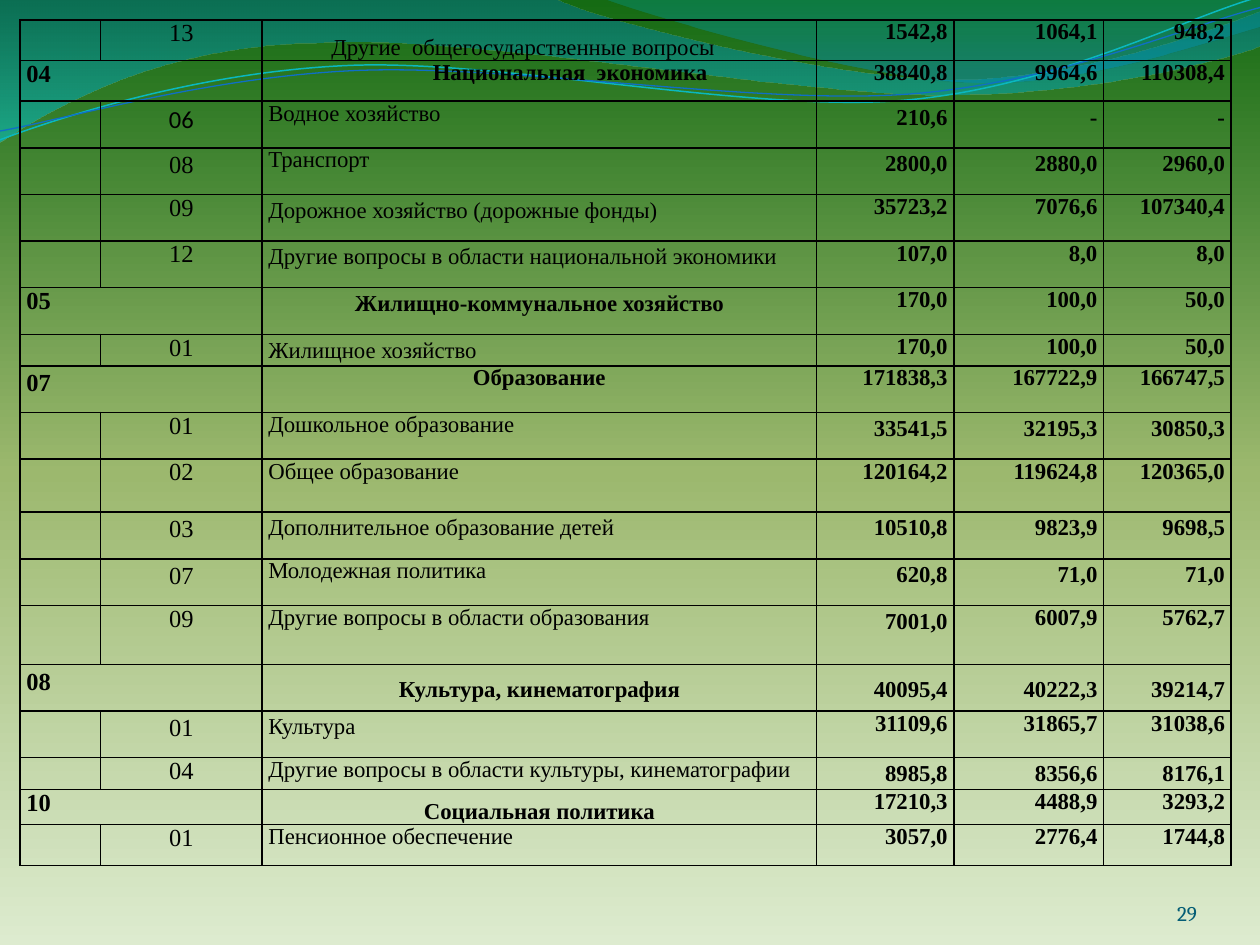
from lxml.etree import SubElement
from pptx import Presentation
from pptx.dml.color import RGBColor
from pptx.enum.text import MSO_ANCHOR, PP_ALIGN
from pptx.oxml.ns import qn
from pptx.util import Cm, Pt

INK = {"text": "000000", "page": "045D75", "aqua": "0AB8BF", "blue": "0F6FC6"}
SKY = [(0, "DDEBCF", 100), (50, "9CB86E", 100), (100, "156B13", 100)]
SERIF = "Times New Roman"
GRID = Cm(2.54)  # one unit of the wave points

# A pair is a line to a point, six numbers are a cubic curve.
WAVES = [
    ([(0, -0.01), (4.4, -0.01), (4.76, 0.17, 6.64, 0.63, 7.58, 0.63),
      (8.53, 0.63, 9.58, 0.26, 10, 0.09), (10.01, 0.36),
      (9.83, 0.44, 8.7, 0.76, 7.46, 0.75), (6.22, 0.75, 3.82, 0.28, 2.57, 0.34),
      (1.29, 0.35, 0.46, 0.83, -0.01, 1.13), (0, -0.01)],
     [(0, "0074A1", 45), (100, "00C6CF", 55)]),
    ([(4.79, -0.01), (5.09, 0.11, 6.82, 0.62, 7.69, 0.65),
      (8.56, 0.69, 9.61, 0.32, 10, 0.21), (10, 0), (4.79, -0.01)],
     [(0, "00A1A9", 30), (80, "008BBF", 45)]),
]
LINES = [
    ([(0, 1.11), (0.48, 0.93, 1.58, 0.57, 2.77, 0.52),
      (3.95, 0.47, 5.93, 0.89, 7.13, 0.8), (8.33, 0.71, 9.38, 0.15, 9.98, -0.02)],
     "aqua", 0.85),
    ([(0, 1.04), (0.47, 0.96, 1.64, 0.61, 2.83, 0.56),
      (4.03, 0.51, 5.97, 0.83, 7.17, 0.75), (8.36, 0.67, 9.41, 0.21, 10, 0.06)],
     "blue", 0.75),
]

COLS = [1.63, 3.25, 11.18, 2.77, 3.02, 2.57]
# Height, section, part, name, sums, and the spacing of the last five cells:
# t is tight, l is loose.
ROWS = [
    (0.82, "", "13", "Другие  общегосударственные вопросы", "1542,8 1064,1 948,2", "ttttt"),
    (0.82, "04", "", "Национальная  экономика", "38840,8 9964,6 110308,4", "ttttt"),
    (0.94, "", "06", "Водное хозяйство", "210,6 - -", "ltlll"),
    (0.94, "", "08", "Транспорт", "2800,0 2880,0 2960,0", "ltlll"),
    (0.94, "", "09", "Дорожное хозяйство (дорожные фонды)", "35723,2 7076,6 107340,4", "tlttt"),
    (0.94, "", "12", "Другие вопросы в области национальной экономики", "107,0 8,0 8,0", "tlttt"),
    (0.94, "05", "", "Жилищно-коммунальное хозяйство", "170,0 100,0 50,0", "tlttt"),
    (0.58, "", "01", "Жилищное хозяйство", "170,0 100,0 50,0", "tlttt"),
    (0.94, "07", "", "Образование", "171838,3 167722,9 166747,5", "ltttt"),
    (0.94, "", "01", "Дошкольное образование", "33541,5 32195,3 30850,3", "ttlll"),
    (1.07, "", "02", "Общее образование", "120164,2 119624,8 120365,0", "ttttt"),
    (0.94, "", "03", "Дополнительное образование детей", "10510,8 9823,9 9698,5", "lllll"),
    (0.94, "", "07", "Молодежная политика", "620,8 71,0 71,0", "ltlll"),
    (1.19, "", "09", "Другие вопросы в области образования", "7001,0 6007,9 5762,7", "ttltt"),
    (0.94, "08", "", "Культура, кинематография", "40095,4 40222,3 39214,7", "lllll"),
    (0.94, "", "01", "Культура", "31109,6 31865,7 31038,6", "llttt"),
    (0.64, "", "04", "Другие вопросы в области культуры, кинематографии", "8985,8 8356,6 8176,1", "ttlll"),
    (0.71, "10", "", "Социальная политика", "17210,3 4488,9 3293,2", "ttttt"),
    (0.82, "", "01", "Пенсионное обеспечение", "3057,0 2776,4 1744,8", "ttttt"),
]
MID = {"anchor": MSO_ANCHOR.MIDDLE}
LOW = {"anchor": MSO_ANCHOR.BOTTOM}
EXTRA = {
    (0, 2): {"align": PP_ALIGN.LEFT, "left": 1.57, "first": -0.3, **LOW},
    (1, 2): {"first": 1.24},
    (2, 1): {"font": "Calibri"},
    (14, 2): {"space": 1.5, "before": 6, "after": 0},
    (14, 3): MID, (14, 4): MID, (14, 5): MID,
    (17, 2): LOW,
}


def write(frame, text, size=13, font=SERIF, color="text", bold=False,
          align=PP_ALIGN.LEFT, space=None, before=0, after=0, left=0, first=0):
    para = frame.paragraphs[0]
    para.alignment = align
    para.space_before, para.space_after = Pt(before), Pt(after)
    if space:
        para.line_spacing = space
    props = para._p.get_or_add_pPr()
    props.set("marL", str(Cm(left)))
    props.set("indent", str(Cm(first)))
    run = para.add_run()
    run.text = text
    run.font.size, run.font.name, run.font.bold = Pt(size), font, bold
    run.font.color.rgb = RGBColor.from_string(INK[color])


def blend(fill, root, stops, angle):
    """Fill with a gradient of (place, colour, alpha) stops, in percent."""
    fill.gradient()
    grad = root.find(".//" + qn("a:gradFill"))
    grad.find(qn("a:lin")).set("ang", str(angle * 60000))
    items = grad.find(qn("a:gsLst"))
    items.clear()
    for place, color, alpha in stops:
        stop = SubElement(items, qn("a:gs"), pos=str(place * 1000))
        tint = SubElement(stop, qn("a:srgbClr"), val=color)
        if alpha < 100:
            SubElement(tint, qn("a:alpha"), val=str(alpha * 1000))


def add_curve(slide, parts, close):
    """Outline all knots, then join each three of a curve into one bend."""
    knots = [(round(part[i] * GRID), round(part[i + 1] * GRID))
             for part in parts for i in range(0, len(part), 2)]
    pen = slide.shapes.build_freeform(*knots[0], scale=1.0)
    pen.add_line_segments(knots[1:], close=close)
    shape = pen.convert_to_shape()
    shape.shadow.inherit = False
    sides = iter(list(shape._element.iter(qn("a:lnTo"))))
    for part in parts[1:]:
        side = next(sides)
        if len(part) == 6:
            side.tag = qn("a:cubicBezTo")
            for extra in (next(sides), next(sides)):
                side.append(extra[0])
                extra.getparent().remove(extra)
    return shape


def add_wave(slide, parts, stops):
    shape = add_curve(slide, parts, True)
    shape.line.fill.background()
    blend(shape.fill, shape._element, stops, 90)


def add_line(slide, parts, color, width):
    shape = add_curve(slide, parts, False)
    shape.fill.background()
    shape.line.color.rgb = RGBColor.from_string(INK[color])
    shape.line.width = Pt(width)


def frame_cell(cell):
    """Set thin margins, black borders and no fill."""
    cell.margin_left = cell.margin_right = Cm(0.13)
    cell.margin_top = cell.margin_bottom = 0
    props = cell._tc.get_or_add_tcPr()
    for side in ("lnL", "lnR", "lnT", "lnB"):
        line = SubElement(props, qn("a:" + side), w=str(Pt(1)))
        fill = SubElement(line, qn("a:solidFill"))
        SubElement(fill, qn("a:srgbClr"), val=INK["text"])
    cell.fill.background()


def fill_cell(cell, text, anchor=MSO_ANCHOR.TOP, **style):
    cell.vertical_anchor = anchor
    write(cell.text_frame, text, **style)


def add_budget(slide):
    table = slide.shapes.add_table(len(ROWS), len(COLS), Cm(0.4), Cm(0.4),
                                   Cm(sum(COLS)), Cm(sum(r[0] for r in ROWS))).table
    table.first_row = table.horz_banding = False
    for col, width in zip(table.columns, COLS):
        col.width = Cm(width)
    for y, (height, code, part, name, sums, marks) in enumerate(ROWS):
        table.rows[y].height = Cm(height)
        head = bool(code)
        center = PP_ALIGN.CENTER
        looks = [
            {"size": 14, "bold": head, "align": PP_ALIGN.LEFT if head else center},
            {"bold": head, "align": center if head else PP_ALIGN.JUSTIFY},
        ] + [{"bold": True, "align": PP_ALIGN.RIGHT}] * 3
        for cell in table.rows[y].cells:
            frame_cell(cell)
        if head:
            table.cell(y, 0).merge(table.cell(y, 1))
        blank = table.cell(y, 1 if head else 0).text_frame.paragraphs[0]
        SubElement(blank._p, qn("a:endParaRPr"), sz="1000")
        texts = [code or part, name, *sums.split()]
        for x, (text, look, mark) in enumerate(zip(texts, looks, marks), 1):
            loose = {"space": 1.15, "after": 10} if mark == "l" else {}
            place = 0 if head and x == 1 else x
            fill_cell(table.cell(y, place), text,
                      **{**look, **loose, **EXTRA.get((y, x), {})})


def add_page(slide, text):
    frame = slide.shapes.add_textbox(Cm(22.02), Cm(17.65), Cm(2.11), Cm(1.02)).text_frame
    frame.word_wrap = True
    frame.vertical_anchor = MSO_ANCHOR.BOTTOM
    frame.margin_left = frame.margin_right = frame.margin_top = frame.margin_bottom = 0
    write(frame, text, size=12, font="Cambria", color="page", align=PP_ALIGN.RIGHT)


def main():
    deck = Presentation()
    deck.slide_width, deck.slide_height = Cm(25.4), Cm(19.05)
    slide = deck.slides.add_slide(deck.slide_layouts[6])
    blend(slide.background.fill, slide._element, SKY, 270)
    for wave in WAVES:
        add_wave(slide, *wave)
    for line in LINES:
        add_line(slide, *line)
    add_page(slide, "29")
    add_budget(slide)
    deck.save("out.pptx")


if __name__ == "__main__":
    main()
